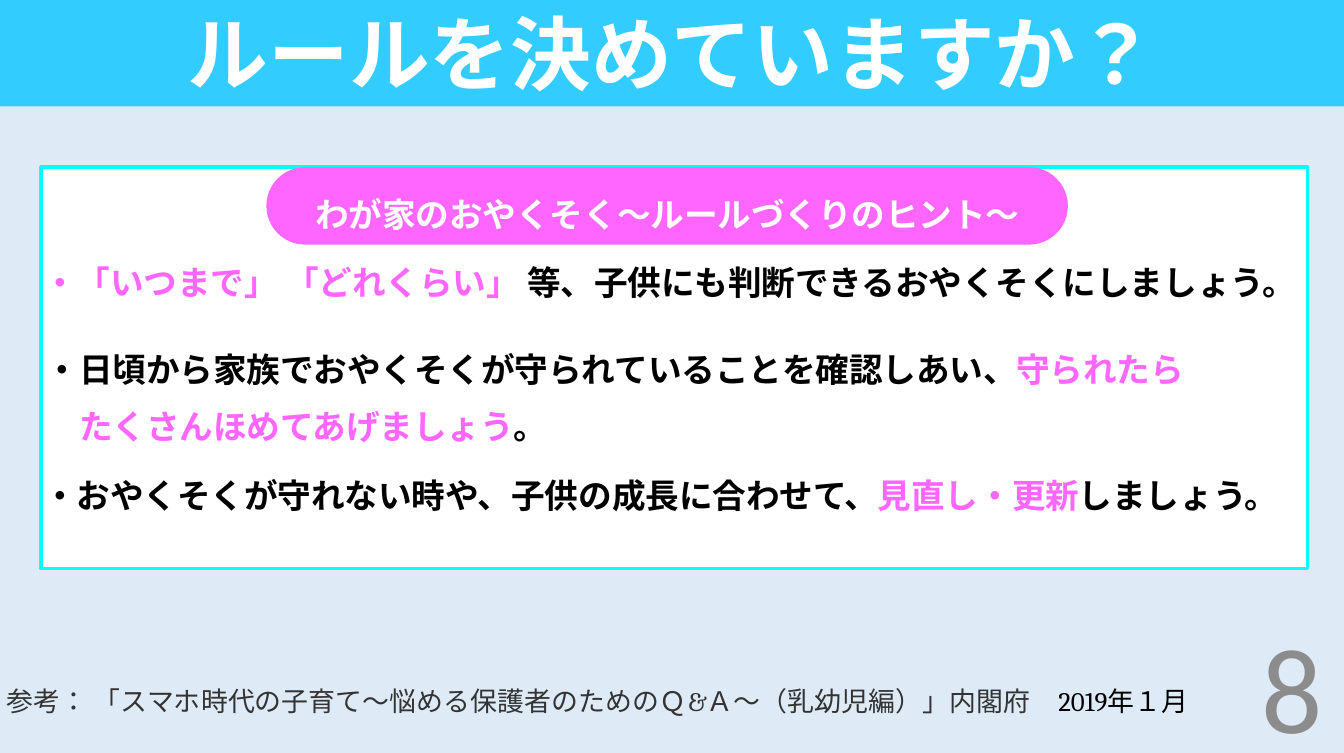
from dataclasses import dataclass

import pptx
import pptx.dml.color
import pptx.enum.lang
import pptx.enum.shapes
import pptx.enum.text
import pptx.oxml
import pptx.oxml.ns
import pptx.util

Inches = pptx.util.Inches
Pt = pptx.util.Pt
Align = pptx.enum.text.PP_ALIGN
Anchor = pptx.enum.text.MSO_ANCHOR
Shape = pptx.enum.shapes.MSO_SHAPE


@dataclass(frozen=True)
class Theme:
    backdrop: str = "DEEBF7"
    banner: str = "33CCFF"
    frame: str = "00FFFF"
    accent: str = "FF66FF"
    white: str = "FFFFFF"
    black: str = "000000"
    source: str = "333333"
    number: str = "8C8C8C"
    gothic: str = "Noto Sans CJK JP"
    serif: str = "Cambria"
    sans: str = "Calibri"
    title_size: float = 24
    body_size: float = 10
    source_size: float = 8
    number_size: float = 36


THEME = Theme()


@dataclass(frozen=True)
class Box:
    left: float
    top: float
    width: float
    height: float

    def emu(self) -> tuple:
        return tuple(Inches(v) for v in (self.left, self.top, self.width, self.height))


@dataclass(frozen=True)
class Span:
    text: str
    color: str = THEME.black


@dataclass(frozen=True)
class Hint:
    box: Box
    lines: tuple[tuple[Span, ...], ...]
    top_inset: float = 0.05
    spacing: float | None = None


HINTS = (
    Hint(Box(0.08, 0.99, 5.33, 0.28), ((
        Span("・「いつまで」 「どれくらい」 ", THEME.accent),
        Span("等、子供にも判断できるおやくそくにしましょう。")),), spacing=15),
    Hint(Box(0.09, 1.25, 5.22, 0.7), (
        (Span("・日頃から家族でおやくそくが守られていることを確認しあい、"),
         Span("守られたら", THEME.accent)),
        (Span("　たくさんほめてあげましょう", THEME.accent), Span("。"))),
        top_inset=0.12, spacing=17),
    Hint(Box(0.08, 1.91, 5.22, 0.32), ((
        Span("・おやくそくが守れない時や、子供の成長に合わせて、"),
        Span("見直し・更新", THEME.accent),
        Span("しましょう。")),)),
)


def rgb(color: str) -> pptx.dml.color.RGBColor:
    return pptx.dml.color.RGBColor.from_string(color)


def write(shape, lines: tuple[tuple[Span, ...], ...], *, size: float, font: str = THEME.gothic,
          bold: bool = False, align=Align.LEFT, anchor=Anchor.TOP,
          spacing: float | None = None,
          insets: tuple[float, float, float, float] = (0.1, 0.05, 0.1, 0.05)) -> None:
    """Fill a shape with lines of coloured spans in one format."""
    frame = shape.text_frame
    frame.word_wrap = True
    frame.auto_size = pptx.enum.text.MSO_AUTO_SIZE.NONE
    frame.vertical_anchor = anchor
    (frame.margin_left, frame.margin_top,
     frame.margin_right, frame.margin_bottom) = (Inches(v) for v in insets)
    for index, spans in enumerate(lines):
        paragraph = frame.add_paragraph() if index else frame.paragraphs[0]
        paragraph.alignment = align
        paragraph.line_spacing = Pt(spacing) if spacing else 1.0
        for span in spans:
            run = paragraph.add_run()
            run.text = span.text
            run.font.size = Pt(size)
            run.font.bold = bold
            run.font.color.rgb = rgb(span.color)
            run.font.name = font
            run.font.language_id = pptx.enum.lang.MSO_LANGUAGE_ID.JAPANESE
            # East Asian typeface, placed right after the Latin one
            east_asian = pptx.oxml.parse_xml(
                f'<a:ea {pptx.oxml.ns.nsdecls("a")} typeface="{THEME.gothic}"/>')
            run.font._element.find(pptx.oxml.ns.qn("a:latin")).addnext(east_asian)


def add_panel(slide, kind, box: Box, fill: str, line: str | None = None):
    panel = slide.shapes.add_shape(kind, *box.emu())
    panel.shadow.inherit = False
    panel.fill.solid()
    panel.fill.fore_color.rgb = rgb(fill)
    if line:
        panel.line.color.rgb = rgb(line)
        panel.line.width = Pt(1)
    else:
        panel.line.fill.background()
    return panel


def add_title(slide, box: Box, text: str) -> None:
    title = slide.shapes.title
    title.left, title.top, title.width, title.height = box.emu()
    title.fill.solid()
    title.fill.fore_color.rgb = rgb(THEME.banner)
    write(title, ((Span(text, THEME.white),),), size=THEME.title_size, bold=True,
          align=Align.CENTER, anchor=Anchor.MIDDLE)


def add_hint(slide, hint: Hint) -> None:
    write(slide.shapes.add_textbox(*hint.box.emu()), hint.lines, size=THEME.body_size,
          bold=True, align=Align.JUSTIFY, spacing=hint.spacing,
          insets=(0.1, hint.top_inset, 0, 0.05))


def main() -> None:
    deck = pptx.Presentation()
    deck.slide_width, deck.slide_height = Inches(5.55), Inches(3.11)
    slide = deck.slides.add_slide(deck.slide_layouts.get_by_name("Title Only"))
    slide.background.fill.solid()
    slide.background.fill.fore_color.rgb = rgb(THEME.backdrop)

    # Title banner
    add_title(slide, Box(0, -0.01, 5.55, 0.45), "ルールを決めていますか？")

    # Framed hints under a pill heading
    add_panel(slide, Shape.RECTANGLE, Box(0.17, 0.69, 5.23, 1.66), THEME.white, THEME.frame)
    heading = add_panel(slide, Shape.ROUNDED_RECTANGLE, Box(1.1, 0.69, 3.31, 0.32), THEME.accent)
    heading.adjustments[0] = 0.5
    write(heading, ((Span("わが家のおやくそく～ルールづくりのヒント～", THEME.white),),),
          size=THEME.body_size, font=THEME.serif, bold=True, align=Align.CENTER,
          anchor=Anchor.MIDDLE, spacing=17, insets=(0.1, 0, 0.1, 0))
    for hint in HINTS:
        add_hint(slide, hint)

    # Source and page number
    source = slide.shapes.add_textbox(*Box(-0.07, 2.78, 5.25, 0.21).emu())
    write(source, ((
        Span("参考： 「スマホ時代の子育て～悩める保護者のためのＱ&Ａ～（乳幼児編）」内閣府　", THEME.source),
        Span("2019年１月")),), size=THEME.source_size, font=THEME.serif)
    page_number = slide.shapes.add_textbox(*Box(5.04, 2.63, 0.52, 0.4).emu())
    write(page_number, ((Span("8", THEME.number),),), size=THEME.number_size,
          font=THEME.sans, align=Align.RIGHT, anchor=Anchor.MIDDLE)

    deck.save("out.pptx")


if __name__ == "__main__":
    main()
